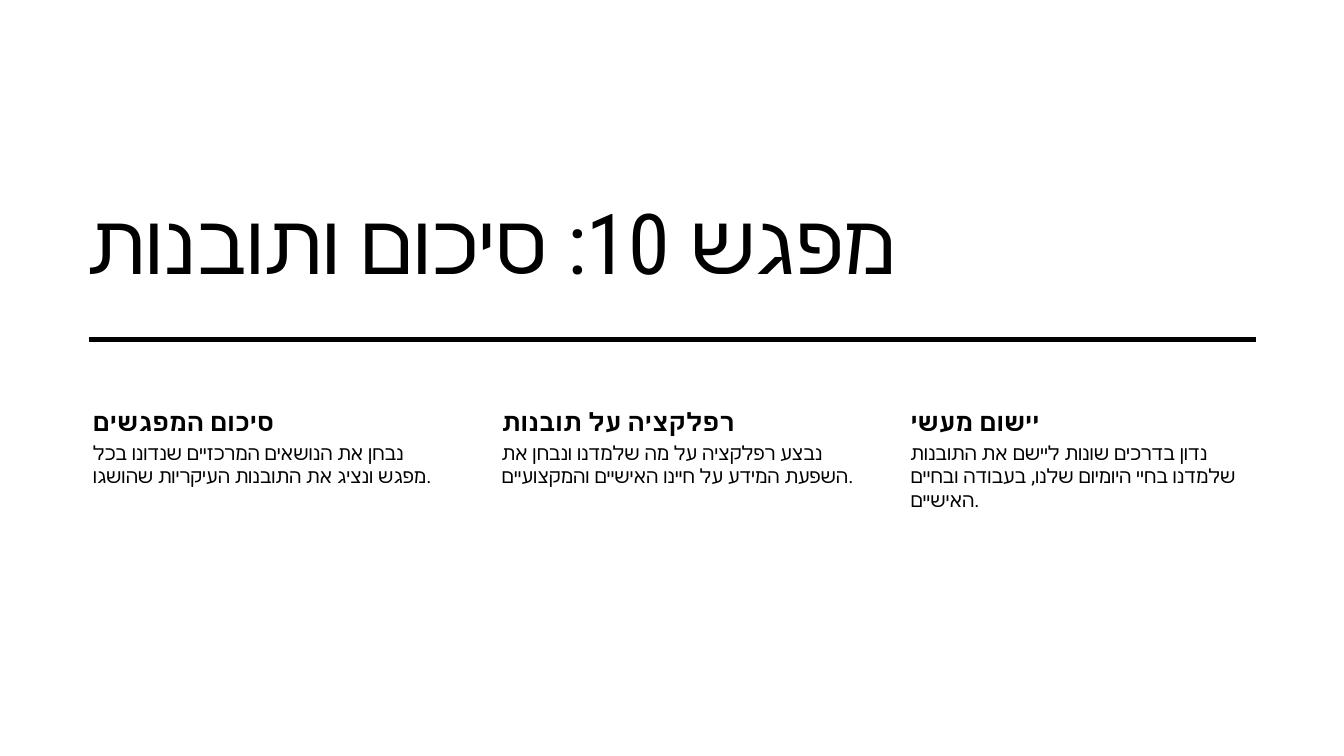
"""Build the closing slide of session 10: a title, a rule and three columns."""
from lxml.etree import SubElement
from pptx import Presentation
from pptx.dml.color import RGBColor
from pptx.enum.shapes import MSO_CONNECTOR
from pptx.enum.text import MSO_ANCHOR, MSO_AUTO_SIZE, PP_ALIGN
from pptx.oxml.ns import qn
from pptx.util import Inches, Pt

TITLE = "מפגש 10: סיכום ותובנות"
COLUMNS = [
    ("סיכום המפגשים",
     "נבחן את הנושאים המרכזיים שנדונו בכל מפגש ונציג את התובנות העיקריות שהושגו."),
    ("רפלקציה על תובנות",
     "נבצע רפלקציה על מה שלמדנו ונבחן את השפעת המידע על חיינו האישיים והמקצועיים."),
    ("יישום מעשי",
     "נדון בדרכים שונות ליישם את התובנות שלמדנו בחיי היומיום שלנו, בעבודה ובחיים האישיים."),
]
BLACK = "000000"
TITLE_FONT, BODY_FONT = "Roboto Condensed", "Roboto"
LEFT, COLUMN_WIDTH, GAP = 0.77, 3.69, 0.365
HEADING_TOP, HEADING_HEIGHT, DETAIL_HEIGHT = 4, 0.35, 2.34
RULE_LEFT, RULE_RIGHT, RULE_TOP = 0.88, 12.46, 3.37


def color(value):
    return RGBColor.from_string(value)


def write(frame, text, size, font, bold, insets, anchor=MSO_ANCHOR.TOP):
    frame.word_wrap = True
    frame.auto_size = MSO_AUTO_SIZE.NONE
    frame.vertical_anchor = anchor
    (frame.margin_left, frame.margin_top,
     frame.margin_right, frame.margin_bottom) = map(Inches, insets)
    para = frame.paragraphs[0]
    para.alignment = PP_ALIGN.LEFT
    span = para.add_run()
    span.text = text
    span.font.size = Pt(size)
    span.font.bold = bold
    span.font.color.rgb = color(BLACK)
    span.font.name = font
    properties = span._r.get_or_add_rPr()
    SubElement(properties, qn("a:cs")).set("typeface", font)
    return properties


def add_title(page):
    title = page.shapes.title
    title.left, title.top, title.width, title.height = map(
        Inches, (LEFT, 1.4, 8.74, 1.54))
    properties = write(title.text_frame, TITLE, 60, TITLE_FONT, False,
                       (0.1, 0.05, 0.1, 0.05), MSO_ANCHOR.BOTTOM)
    properties.set("spc", "30")


def add_column(page, index, heading, detail):
    left = LEFT + index * (COLUMN_WIDTH + GAP)
    rows = [
        (heading, HEADING_TOP, HEADING_HEIGHT, 18, True, 0.03),
        (detail, HEADING_TOP + HEADING_HEIGHT, DETAIL_HEIGHT, 14, False, 0.02),
    ]
    for text, top, height, size, bold, inset in rows:
        box = page.shapes.add_textbox(
            *map(Inches, (left, top, COLUMN_WIDTH, height)))
        write(box.text_frame, text, size, BODY_FONT, bold,
              (0.15, inset, inset, inset))


def add_rule(page):
    rule = page.shapes.add_connector(
        MSO_CONNECTOR.STRAIGHT,
        *map(Inches, (RULE_LEFT, RULE_TOP, RULE_RIGHT, RULE_TOP)))
    rule.line.color.rgb = color(BLACK)
    rule.line.width = Pt(3.5)
    SubElement(rule._element.spPr, qn("a:effectLst"))


def main():
    deck = Presentation()
    deck.slide_width, deck.slide_height = Inches(13.33), Inches(7.5)
    page = deck.slides.add_slide(deck.slide_layouts[5])
    page.background.fill.solid()
    page.background.fill.fore_color.rgb = color("FFFFFF")
    add_title(page)
    for index, (heading, detail) in enumerate(COLUMNS):
        add_column(page, index, heading, detail)
    add_rule(page)
    deck.save("out.pptx")


if __name__ == "__main__":
    main()
